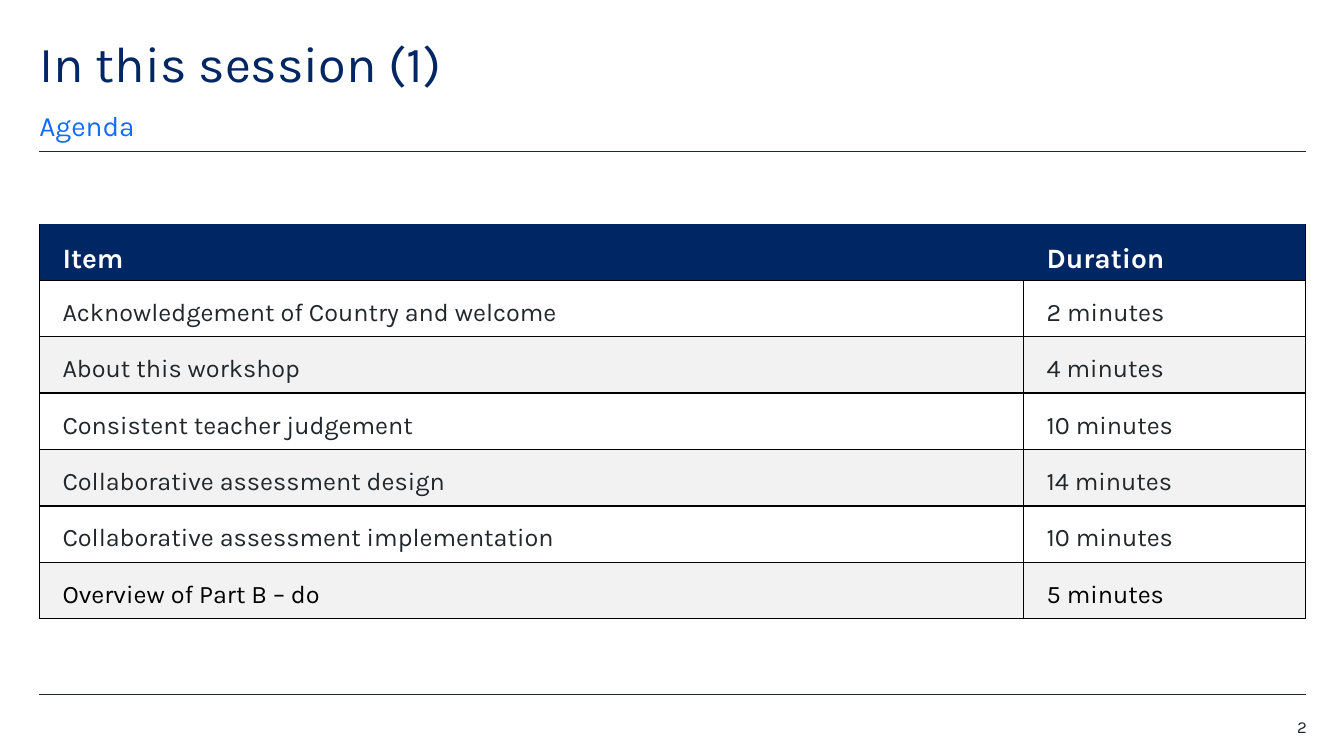
from lxml import etree
from pptx import Presentation
from pptx.dml.color import RGBColor
from pptx.enum.shapes import MSO_CONNECTOR
from pptx.enum.text import MSO_ANCHOR, PP_ALIGN
from pptx.oxml import parse_xml
from pptx.oxml.ns import nsdecls, qn
from pptx.util import Inches, Pt

FONT = "Karla"
NAVY, BLUE, INK, BLACK = "002664", "146CFD", "22272B", "000000"
WHITE, GREY = "FFFFFF", "F2F2F2"

TITLE = "In this session (1)"
SUBTITLE = "Agenda"
PAGE = "2"
AGENDA = [
    ("Item", "Duration"),
    ("Acknowledgement of Country and welcome", "2 minutes"),
    ("About this workshop", "4 minutes"),
    ("Consistent teacher judgement", "10 minutes"),
    ("Collaborative assessment design", "14 minutes"),
    ("Collaborative assessment implementation", "10 minutes"),
    ("Overview of Part B – do", "5 minutes"),
]
LEFT, RIGHT = 0.39, 12.95
RULES = (1.5, 6.89)
COLUMNS = (9.76, 2.8)
TABLE_TOP, ROW_HEIGHT = 2.22, 0.56


def rgb(color):
    return RGBColor.from_string(color)


def write(tf, text, size, color, bold=False, align=PP_ALIGN.LEFT, spacing=1.5, after=12):
    p = tf.paragraphs[0]
    p.alignment, p.line_spacing, p.space_after = align, spacing, Pt(after)
    r = p.add_run()
    r.text = text
    font = r.font
    font.name, font.size, font.bold = FONT, Pt(size), bold
    font.color.rgb = rgb(color)


def add_text(s, box, text, size, color, anchor=MSO_ANCHOR.TOP, **fmt):
    tf = s.shapes.add_textbox(*map(Inches, box)).text_frame
    tf.word_wrap = True
    tf.vertical_anchor = anchor
    tf.margin_left = tf.margin_right = tf.margin_top = tf.margin_bottom = 0
    write(tf, text, size, color, **fmt)


def add_rule(s, y):
    line = s.shapes.add_connector(
        MSO_CONNECTOR.STRAIGHT, Inches(LEFT), Inches(y), Inches(RIGHT), Inches(y))
    line.line.color.rgb = rgb(INK)
    line.line.width = Pt(0.5)
    etree.SubElement(line._element.spPr, qn("a:effectLst"))


def set_borders(cell, hidden):
    """Draw the four sides in black, except those named in hidden."""
    tc_pr = cell._tc.get_or_add_tcPr()
    for i, side in enumerate("LRTB"):
        fill = "<a:noFill/>" if side in hidden else (
            f'<a:solidFill><a:srgbClr val="{BLACK}"/></a:solidFill>')
        tc_pr.insert(i, parse_xml(
            f'<a:ln{side} {nsdecls("a")} w="{Pt(1)}">{fill}</a:ln{side}>'))


def add_agenda(s):
    table = s.shapes.add_table(
        len(AGENDA), len(COLUMNS), Inches(LEFT), Inches(TABLE_TOP),
        Inches(sum(COLUMNS)), Inches(ROW_HEIGHT * len(AGENDA))).table
    for column, width in zip(table.columns, COLUMNS):
        column.width = Inches(width)
    last = len(AGENDA) - 1
    for i, row in enumerate(AGENDA):
        for j, text in enumerate(row):
            cell = table.cell(i, j)
            cell.margin_left = cell.margin_right = Inches(0.23)
            cell.margin_top, cell.margin_bottom = Inches(0.03), 0
            cell.fill.solid()
            if i == 0:
                cell.fill.fore_color.rgb = rgb(NAVY)
                write(cell.text_frame, text, 20, WHITE, bold=True)
                set_borders(cell, hidden="TR" if j == 0 else "TL")
            else:
                cell.fill.fore_color.rgb = rgb(WHITE if i % 2 else GREY)
                write(cell.text_frame, text, 18, BLACK if i == last else INK)
                set_borders(cell, hidden="")


def main():
    prs = Presentation()
    prs.slide_width, prs.slide_height = Inches(13.33), Inches(7.5)
    s = prs.slides.add_slide(prs.slide_layouts[6])
    for y in RULES:
        add_rule(s, y)
    add_text(s, (LEFT, 0.39, 11.02, 0.6), TITLE, 36, NAVY, spacing=0.9, after=0)
    add_text(s, (LEFT, 1.07, 11.02, 0.34), SUBTITLE, 20, BLUE, anchor=MSO_ANCHOR.BOTTOM)
    add_agenda(s)
    add_text(s, (12.17, 7.13, 0.79, 0.2), PAGE, 12, INK,
             align=PP_ALIGN.RIGHT, spacing=0.9, after=6)
    prs.save("out.pptx")


if __name__ == "__main__":
    main()
